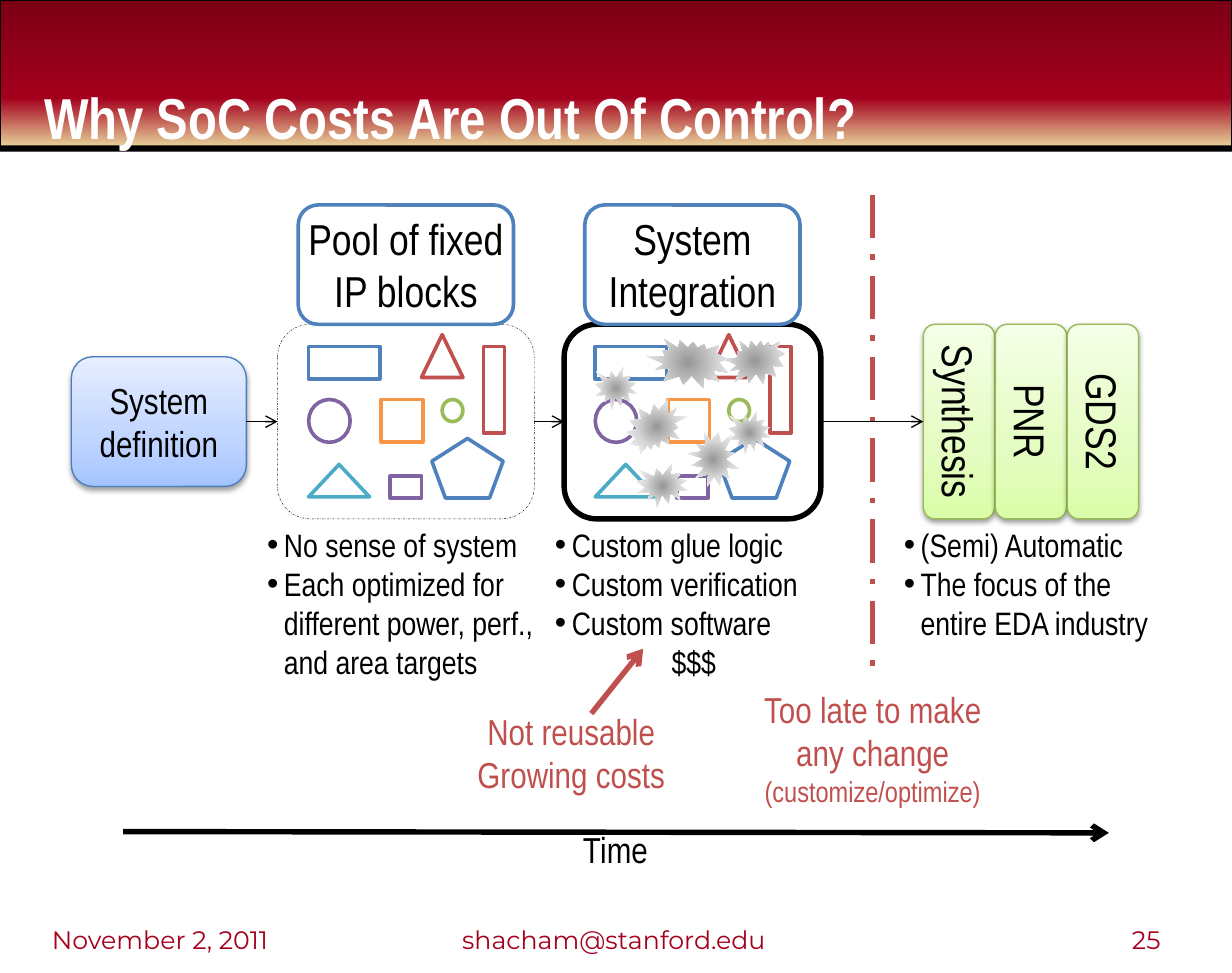
import pptx
import pptx.dml.color
import pptx.enum.dml
import pptx.enum.shapes
import pptx.enum.text
import pptx.oxml
import pptx.util

Inches = pptx.util.Inches
Pt = pptx.util.Pt
Kind = pptx.enum.shapes.MSO_SHAPE
Dash = pptx.enum.dml.MSO_LINE
Align = pptx.enum.text.PP_ALIGN
Anchor = pptx.enum.text.MSO_ANCHOR

BLACK, WHITE, CRIMSON = "000000", "FFFFFF", "A4001D"
BLUE, RED, GREEN = "4F81BD", "C0504D", "9BBB59"
PURPLE, ORANGE, TEAL = "8064A2", "F79646", "4BACC6"
UPWARD, DOWNWARD = '<a:lin ang="16200000" scaled="0"/>', '<a:lin ang="5400000" scaled="0"/>'
RADIAL = ('<a:path path="circle"><a:fillToRect l="50000" t="50000" r="50000" b="50000"/>'
          '</a:path>')
BANNER_FILL = ([(0, "7B0014"), (67, CRIMSON), (100, "E7D19A")], DOWNWARD)
BLUE_FILL = ([(0, "A4C4FF"), (35, "BFD4FF"), (100, "E6EEFF")], UPWARD)
GREEN_FILL = ([(0, "DAFDA7"), (35, "E4FCC2"), (100, "F5FFE7")], UPWARD)
SEAL_FILL = ([(0, "979797"), (50, "D7D7D7"), (100, WHITE)], RADIAL)
INSETS = (0.1, 0.05, 0.1, 0.05)
NARROW_INSETS = (0, 0.05, 0, 0.05)


def rgb(code):
    return pptx.dml.color.RGBColor.from_string(code)


def drawing_xml(tag, body="", attributes=""):
    """Make one DrawingML element from its tag, inner markup and attributes."""
    space = "http://schemas.openxmlformats.org/drawingml/2006/main"
    return pptx.oxml.parse_xml(f'<a:{tag} xmlns:a="{space}" {attributes}>{body}</a:{tag}>')


def shadow_list(blur, distance, angle, opacity):
    """Make an effect list with one black outer shadow, sized in points."""
    return drawing_xml("effectLst", (
        f'<a:outerShdw blurRad="{Pt(blur)}" dist="{Pt(distance)}" dir="{angle * 60000}" '
        f'rotWithShape="0"><a:srgbClr val="000000"><a:alpha val="{opacity * 1000}"/>'
        '</a:srgbClr></a:outerShdw>'))


class SlideBuilder:
    font = "Arial Narrow"

    def __init__(self, slide):
        self.slide = slide

    def label(self, shape, lines, size, color=BLACK, align=Align.CENTER, anchor=Anchor.TOP,
              insets=INSETS, bullets=0, font=None, bold=False):
        """Fill a shape with paragraphs; the first `bullets` of them get a bullet."""
        frame = shape.text_frame
        frame.text = "\n".join(lines)
        frame.word_wrap = True
        frame.auto_size = pptx.enum.text.MSO_AUTO_SIZE.NONE
        frame.vertical_anchor = anchor
        (frame.margin_left, frame.margin_top,
         frame.margin_right, frame.margin_bottom) = map(Inches, insets)
        for number, para in enumerate(frame.paragraphs):
            para.alignment = align
            if number < bullets:
                properties = para._p.get_or_add_pPr()
                properties.set("marL", str(Inches(0.13)))
                properties.set("indent", str(Inches(-0.13)))
                properties.append(drawing_xml("buFont", attributes='typeface="Arial"'))
                properties.append(drawing_xml("buChar", attributes='char="•"'))
            for span in para.runs:
                span.font.name = font or self.font
                span.font.size = Pt(size)
                span.font.bold = bold
                span.font.color.rgb = rgb(color)
        return frame

    def title(self, place, words):
        title = self.slide.shapes.title
        title.left, title.top, title.width, title.height = map(Inches, place)
        frame = self.label(title, [words], 32, WHITE, Align.LEFT, Anchor.BOTTOM,
                           (0.1, 0, 0.1, 0), bold=True)
        para = frame.paragraphs[0]
        para.line_spacing = 0.85
        color_fill = para.runs[0]._r.rPr.solidFill
        color_fill.addnext(shadow_list(3, 3, 45, 60))
        title._element.getparent().append(title._element)

    def text(self, place, lines, size, **style):
        box = self.slide.shapes.add_textbox(*map(Inches, place))
        return self.label(box, lines, size, **style)

    def bullet_list(self, place, lines, bullets):
        return self.text(place, lines, 18, align=Align.LEFT, insets=NARROW_INSETS,
                         bullets=bullets)

    def shape(self, kind, place, fill=None, line=None, width=2, dash=None, rotation=0,
              shadow=False):
        """Draw a preset shape; fill is a colour, a (stops, direction) pair or None."""
        shape = self.slide.shapes.add_shape(kind, *map(Inches, place))
        shape.rotation = rotation
        shape.shadow.inherit = False
        properties = shape._element.spPr
        if isinstance(fill, str):
            shape.fill.solid()
            shape.fill.fore_color.rgb = rgb(fill)
        else:
            shape.fill.background()
        if isinstance(fill, tuple):
            stops, direction = fill
            marks = "".join(f'<a:gs pos="{position * 1000}"><a:srgbClr val="{code}"/></a:gs>'
                            for position, code in stops)
            gradient = drawing_xml("gradFill", f"<a:gsLst>{marks}</a:gsLst>{direction}",
                                   'rotWithShape="1"')
            properties.replace(properties.find("{*}noFill"), gradient)
        if line:
            self.stroke(shape.line, line, width, dash)
        else:
            shape.line.fill.background()
        if shadow:
            properties.replace(properties.find("{*}effectLst"), shadow_list(3.1, 1.6, 90, 38))
        return shape

    def stroke(self, line, color, width, dash=None):
        line.color.rgb = rgb(color)
        line.width = Pt(width)
        if dash:
            line.dash_style = dash

    def line(self, start, end, color=BLACK, width=3.0, dash=None, arrow=True):
        connector = self.slide.shapes.add_connector(
            pptx.enum.shapes.MSO_CONNECTOR.STRAIGHT, *map(Inches, (*start, *end)))
        self.stroke(connector.line, color, width, dash)
        if arrow:
            connector.line._get_or_add_ln().append(
                drawing_xml("tailEnd", attributes='type="arrow"'))
        connector._element.spPr.append(drawing_xml("effectLst"))
        return connector

    def join(self, source, target):
        """Draw a thin arrow from the right side of one box to the left side of another."""
        connector = self.line((0, 0), (1, 1), width=0.75)
        connector.begin_connect(source, 3)
        connector.end_connect(target, 1)

    def ip_blocks(self, left):
        """Draw the set of IP blocks inside the frame that starts at left."""
        for kind, x, y, width, height, color in (
                (Kind.RECTANGLE, 0.24, 2.67, 0.55, 0.25, BLUE),
                (Kind.ISOSCELES_TRIANGLE, 1.11, 2.58, 0.32, 0.33, RED),
                (Kind.OVAL, 0.24, 3.08, 0.32, 0.33, PURPLE),
                (Kind.RECTANGLE, 0.8, 3.08, 0.32, 0.33, ORANGE),
                (Kind.RECTANGLE, 1.59, 2.67, 0.16, 0.67, RED),
                (Kind.ISOSCELES_TRIANGLE, 0.24, 3.58, 0.47, 0.25, TEAL),
                (Kind.REGULAR_PENTAGON, 1.19, 3.38, 0.55, 0.46, BLUE),
                (Kind.OVAL, 1.27, 3.08, 0.16, 0.17, GREEN),
                (Kind.RECTANGLE, 0.87, 3.67, 0.24, 0.17, PURPLE)):
            self.shape(kind, (left + x, y, width, height), WHITE, color)


def main():
    deck = pptx.Presentation()
    deck.slide_width, deck.slide_height = Inches(9.5), Inches(7.5)
    page = SlideBuilder(deck.slides.add_slide(deck.slide_layouts[5]))

    page.shape(Kind.RECTANGLE, (0, 0, 9.5, 1.13), BANNER_FILL, BLACK, 0.75)
    page.shape(Kind.RECTANGLE, (0, 1.12, 9.5, 0.05), BLACK)
    page.title((0.24, 0.11, 7.9, 1.06), "Why SoC Costs Are Out Of Control?")

    definition = page.shape(Kind.ROUNDED_RECTANGLE, (0.55, 2.75, 1.35, 1), BLUE_FILL,
                            "4B7EBC", 0.75, shadow=True)
    page.label(definition, ["System definition"], 20, anchor=Anchor.MIDDLE)

    stages = [definition]
    for left, heading, width, dash in (
            (2.14, "Pool of fixed IP blocks", 0.25, Dash.DASH_DOT),
            (4.35, "System Integration", 3, None)):
        stages.append(page.shape(Kind.ROUNDED_RECTANGLE, (left, 2.5, 1.98, 1.5),
                                 line=BLACK, width=width, dash=dash))
        header = page.shape(Kind.ROUNDED_RECTANGLE, (left + 0.16, 1.58, 1.66, 0.92), WHITE, BLUE)
        page.label(header, [heading], 24, anchor=Anchor.MIDDLE, insets=NARROW_INSETS)
        page.ip_blocks(left)

    for kind, place, rotation in (
            (Kind.EXPLOSION2, (4.83, 3.08, 0.47, 0.42), 0),
            (Kind.EXPLOSION1, (5.62, 3.17, 0.32, 0.33), 0),
            (Kind.EXPLOSION1, (4.91, 3.58, 0.4, 0.33), 0),
            (Kind.EXPLOSION2, (4.99, 2.58, 0.63, 0.42), 202.5),
            (Kind.EXPLOSION2, (5.6, 2.57, 0.44, 0.42), 202.5),
            (Kind.EXPLOSION1, (5.29, 3.34, 0.42, 0.4), 90),
            (Kind.EXPLOSION1, (4.59, 2.83, 0.32, 0.33), 0)):
        page.shape(kind, place, SEAL_FILL, rotation=rotation)

    page.line((6.73, 1.5), (6.73, 5.25), RED, dash=Dash.LONG_DASH_DOT, arrow=False)
    late = page.text((5.7, 5.25, 2.06, 1),
                     ["Too late to make any change", "(customize/optimize)"], 20, color=RED)
    late.paragraphs[1].runs[0].font.size = Pt(16)

    steps = []
    for number, name in enumerate(("Synthesis", "PNR", "GDS2")):
        step = page.shape(Kind.ROUNDED_RECTANGLE, (7.12 + 0.555 * number, 2.5, 0.55, 1.5),
                          GREEN_FILL, "98B955", 0.75, shadow=True)
        frame = page.label(step, [name], 24, anchor=Anchor.BOTTOM)
        frame._txBody.bodyPr.set("vert", "vert")
        steps.append(step)
    stages.append(steps[0])
    for source, target in zip(stages, stages[1:]):
        page.join(source, target)

    page.bullet_list((2.06, 4, 2.14, 1.17), [
        "No sense of system", "Each optimized for different power, perf., and area targets"], 2)
    custom = page.bullet_list((4.28, 4, 2.14, 1.17), [
        "Custom glue logic", "Custom verification", "Custom software", "$$$"], 3)
    custom.paragraphs[3].alignment = Align.CENTER
    page.bullet_list((6.97, 4, 2.06, 1.17), [
        "(Semi) Automatic", "The focus of the entire EDA industry"], 2)

    page.text((3.06, 5.42, 2.69, 1.17), ["Not reusable", "Growing costs"], 20, color=RED)
    page.line((4.56, 5.5), (4.96, 5), RED)
    page.line((0.95, 6.41), (8.55, 6.42))
    page.text((4.35, 6.33, 0.79, 0.33), ["Time"], 20)

    for left, width, words, align in (
            (0.4, 2.22, "November 2, 2011", Align.LEFT),
            (3.22, 3.03, "shacham@stanford.edu", Align.CENTER),
            (6.73, 2.22, "25", Align.RIGHT)):
        page.text((left, 6.98, width, 0.52), [words], 14, color=CRIMSON, align=align,
                  anchor=Anchor.MIDDLE, insets=(0, 0, 0, 0), font="Montserrat")

    deck.save("out.pptx")


if __name__ == "__main__":
    main()
